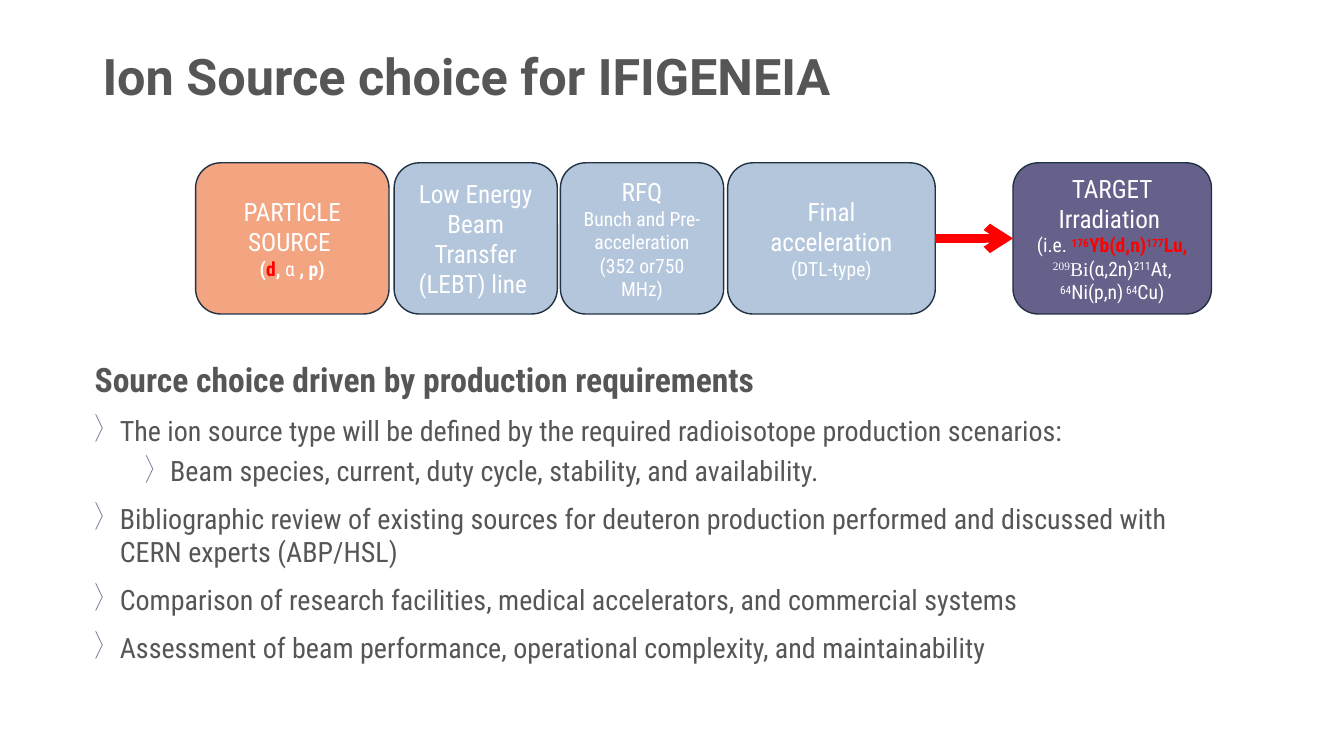
from lxml import etree
from pptx import Presentation
from pptx.dml.color import RGBColor
from pptx.enum.shapes import MSO_CONNECTOR, MSO_SHAPE
from pptx.enum.text import MSO_ANCHOR, PP_ALIGN
from pptx.oxml.ns import qn
from pptx.util import Pt

ROUNDED = MSO_SHAPE.ROUNDED_RECTANGLE
STRAIGHT = MSO_CONNECTOR.STRAIGHT
MIDDLE, TOP = MSO_ANCHOR.MIDDLE, MSO_ANCHOR.TOP
CENTER, LEFT = PP_ALIGN.CENTER, PP_ALIGN.LEFT

WHITE, GREY, RED = "FFFFFF", "565656", "FF0000"
ORANGE, BLUE, PURPLE = "F3A481", "B4C6DB", "66618A"
OUTLINE, BULLET = "213244", "5F5C85"
CONDENSED, SERIF = "Roboto Condensed", "Times New Roman"

STAGE_TOP, STAGE_HEIGHT = 116.3, 108
RIGHT_SIDE, LEFT_SIDE = 3, 1

SUPER = {"superscript": True}
HOT = {"color": RED, "bold": True}
BOLD = {"bold": True}

# left, width, fill, paragraphs as (size, runs)
STAGES = {
    "source": (139.7, 138.2, ORANGE, [
        (18, [("PARTICLE SOURCE ", {})]),
        (14, [("(", BOLD), ("d", HOT), (", ", BOLD), ("α", {}), (" , p)", BOLD)]),
    ]),
    "lebt": (281.5, 116.6, BLUE, [
        (18, [("Low Energy Beam Transfer (LEBT) line ", {})]),
    ]),
    "rfq": (400.3, 116.6, BLUE, [
        (18, [("RFQ", {})]),
        (14, [("Bunch and Pre-acceleration (352 or750 MHz)", {})]),
    ]),
    "final": (519.8, 148.3, BLUE, [
        (18, [("Final acceleration", {})]),
        (14, [("(DTL-type)", {})]),
    ]),
    "target": (723.6, 141.8, PURPLE, [
        (18, [("TARGET", {})]),
        (18, [("Irradiation ", {})]),
        (14, [("(i.e. ", {}), ("176", HOT | SUPER), ("Yb(d,n)", HOT),
              ("177", HOT | SUPER), ("Lu, ", HOT),
              ("209", SUPER | {"font": SERIF}), ("Bi", {"font": SERIF}),
              ("(α,2n)", {}), ("211", SUPER), ("At, ", {}),
              ("64", SUPER), ("Ni(p,n)", {}), (" 64", SUPER), ("Cu)", {})]),
    ]),
}

HEADING = "Source choice driven by production requirements"
# level, text
POINTS = [
    (0, "The ion source type will be defined by the required radioisotope "
        "production scenarios:"),
    (1, "Βeam species, current, duty cycle, stability, and availability."),
    (0, "Bibliographic review of existing sources for deuteron production "
        "performed and discussed with CERN experts (ABP/HSL)"),
    (0, "Comparison of research facilities, medical accelerators, and "
        "commercial systems"),
    (0, "Assessment of beam performance, operational complexity, and "
        "maintainability"),
]


def rgb(value):
    return RGBColor.from_string(value)


def add_run(p, text, size=20, font=CONDENSED, color=GREY, bold=False,
            superscript=False):
    r = p.add_run()
    r.text = text
    r.font.size = Pt(size)
    r.font.name = font
    r.font.color.rgb = rgb(color)
    r.font.bold = bold
    if superscript:
        r._r.get_or_add_rPr().set("baseline", "30000")


def next_paragraph(tf, align=LEFT):
    """Return the empty first paragraph, or a new one once that is in use."""
    first = tf.paragraphs[0]
    p = tf.add_paragraph() if first.runs else first
    p.alignment = align
    return p


def add_textbox(s, left, top, width, height, anchor=TOP):
    tf = s.shapes.add_textbox(Pt(left), Pt(top), Pt(width), Pt(height)).text_frame
    tf.word_wrap = True
    tf.vertical_anchor = anchor
    return tf


def add_stage(s, left, width, fill, paragraphs):
    sp = s.shapes.add_shape(ROUNDED, Pt(left), Pt(STAGE_TOP), Pt(width),
                            Pt(STAGE_HEIGHT))
    sp.shadow.inherit = False
    sp.fill.solid()
    sp.fill.fore_color.rgb = rgb(fill)
    sp.line.color.rgb = rgb(OUTLINE)
    sp.line.width = Pt(1)
    tf = sp.text_frame
    tf.word_wrap = True
    tf.vertical_anchor = MIDDLE
    for size, runs in paragraphs:
        p = next_paragraph(tf, CENTER)
        for text, style in runs:
            add_run(p, text, **({"size": size, "color": WHITE} | style))
    return sp


def add_arrow(s, start, end):
    line = s.shapes.add_connector(STRAIGHT, 0, 0, 0, 0)
    line.begin_connect(start, RIGHT_SIDE)
    line.end_connect(end, LEFT_SIDE)
    line.line.color.rgb = rgb(RED)
    line.line.width = Pt(6)
    etree.SubElement(line.line._get_or_add_ln(), qn("a:tailEnd"), type="arrow")
    etree.SubElement(line._element.spPr, qn("a:effectLst"))


def add_bullet(tf, level, text):
    p = next_paragraph(tf)
    p.level = level
    p.space_before = Pt(5 if level else 10)
    pPr = p._p.get_or_add_pPr()
    pPr.set("marL", str(Pt(18 + 36 * level)))
    pPr.set("indent", str(Pt(-18)))
    color = etree.SubElement(pPr, qn("a:buClr"))
    etree.SubElement(color, qn("a:srgbClr"), val=BULLET)
    etree.SubElement(pPr, qn("a:buChar"), char="⟩")
    add_run(p, text)


def main():
    prs = Presentation()
    prs.slide_width, prs.slide_height = Pt(960), Pt(540)
    s = prs.slides.add_slide(prs.slide_layouts[6])

    title = add_textbox(s, 66.2, 28, 856, 52, MIDDLE)
    add_run(next_paragraph(title), "Ion Source choice for IFIGENEIA",
            size=36, font="Roboto", bold=True)

    stages = {name: add_stage(s, *stage) for name, stage in STAGES.items()}
    add_arrow(s, stages["final"], stages["target"])

    body = add_textbox(s, 60.5, 252.7, 805, 255)
    add_run(next_paragraph(body), HEADING, size=24, bold=True)
    for level, text in POINTS:
        add_bullet(body, level, text)

    prs.save("out.pptx")


if __name__ == "__main__":
    main()
